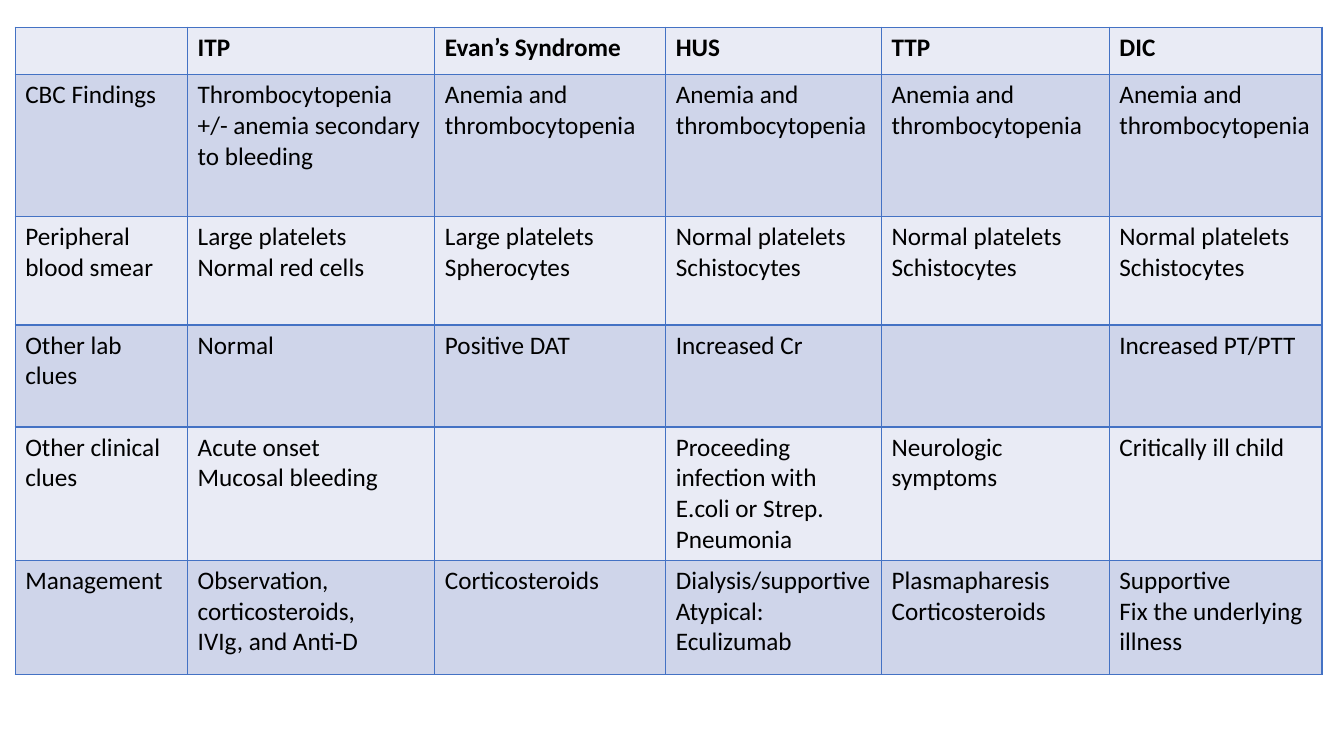
from lxml import etree
from pptx import Presentation
from pptx import util as u
from pptx.dml.color import RGBColor
from pptx.oxml.ns import qn

SLIDE_W, SLIDE_H = u.Inches(13.33), u.Inches(7.5)


def rgb(code):
    return RGBColor.from_string(code)


class Deck:
    """Holds the style and the current slide; lengths are percentages of the slide."""
    font, size, ink = "Calibri", u.Pt(18), "000000"
    bands = ("E9EBF5", "CFD5EA")
    border, border_width = "4472C4", u.Pt(1)

    def __init__(self):
        self.prs = Presentation()
        self.prs.slide_width, self.prs.slide_height = SLIDE_W, SLIDE_H
        self.s = self.prs.slides.add_slide(self.prs.slide_layouts[6])

    def x(self, share):
        return round(SLIDE_W * share / 100)

    def y(self, share):
        return round(SLIDE_H * share / 100)

    def table(self, left, top, widths, heights, rows):
        frame = self.s.shapes.add_table(
            len(heights), len(widths), self.x(left), self.y(top),
            self.x(sum(widths)), self.y(sum(heights)))
        table = frame.table
        table.first_row = table.horz_banding = False
        for column, width in zip(table.columns, widths):
            column.width = self.x(width)
        for i, (row, height) in enumerate(zip(table.rows, heights)):
            row.height = self.y(height)
            for cell, content in zip(row.cells, rows[i]):
                self.cell(cell, content, self.bands[i % 2], bold=i == 0)

    def cell(self, cell, content, fill, bold):
        cell.text = content
        for p in cell.text_frame.paragraphs:
            p.font.name, p.font.size, p.font.bold = self.font, self.size, bold
            p.font.color.rgb = rgb(self.ink)
        # Borders come before the fill in the cell properties
        tcPr = cell._tc.get_or_add_tcPr()
        for side in ("lnL", "lnR", "lnT", "lnB"):
            ln = etree.SubElement(tcPr, qn(f"a:{side}"), w=str(self.border_width))
            solid = etree.SubElement(ln, qn("a:solidFill"))
            etree.SubElement(solid, qn("a:srgbClr"), val=self.border)
        cell.fill.solid()
        cell.fill.fore_color.rgb = rgb(fill)


# Table content; a line break starts a new paragraph
ANEMIA = "Anemia and thrombocytopenia"
FRAGMENTS = "Normal platelets\nSchistocytes"
DISORDERS = [
    ["", "ITP", "Evan’s Syndrome", "HUS", "TTP", "DIC"],
    ["CBC Findings", "Thrombocytopenia +/- anemia secondary to bleeding"] + [ANEMIA] * 4,
    ["Peripheral blood smear", "Large platelets\nNormal red cells",
     "Large platelets\nSpherocytes"] + [FRAGMENTS] * 3,
    ["Other lab clues", "Normal", "Positive DAT", "Increased Cr", "", "Increased PT/PTT"],
    ["Other clinical clues", "Acute onset\nMucosal bleeding", "",
     "Proceeding infection with E.coli or Strep. Pneumonia",
     "Neurologic symptoms", "Critically ill child"],
    ["Management", "Observation, corticosteroids,\nIVIg, and Anti-D", "Corticosteroids",
     "Dialysis/supportive\nAtypical: Eculizumab", "Plasmapharesis\nCorticosteroids",
     "Supportive\nFix the underlying illness"],
]


def main():
    deck = Deck()
    # Comparison of the disorders
    deck.table(left=1.13, top=3.6,
               widths=[12.83, 18.4, 17.18, 16.06, 16.95, 15.83],
               heights=[6.27, 18.73, 14.4, 13.5, 15.07, 15.07],
               rows=DISORDERS)
    deck.prs.save("out.pptx")


if __name__ == "__main__":
    main()
